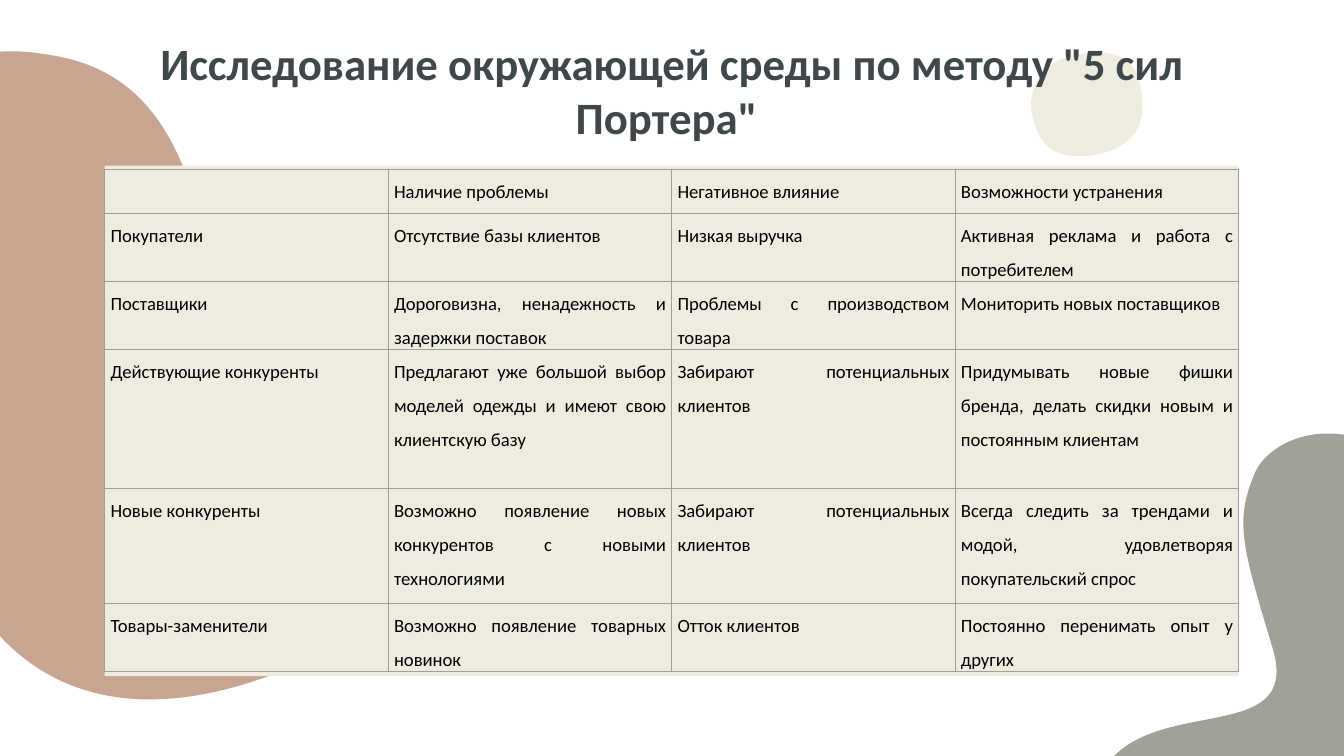
import math

from lxml import etree
from pptx import Presentation, util as u
from pptx.dml.color import RGBColor
from pptx.enum import shapes, text
from pptx.oxml.ns import qn

COLORS = {"clay": "C8A591", "stone": "A0A299", "cream": "EDECDF",
          "heading": "40474B", "body": "000000", "grid": "9E9E9E"}
FONT = "Calibri"
HEADING = 'Исследование окружающей среды по методу "5 сил Портера" '
FORCES = [
    ("", "Наличие проблемы", "Негативное влияние ", "Возможности устранения"),
    ("Покупатели", "Отсутствие базы клиентов", "Низкая выручка",
     "Активная реклама и работа с потребителем"),
    ("Поставщики", "Дороговизна, ненадежность и задержки поставок",
     "Проблемы с производством товара", "Мониторить новых поставщиков"),
    ("Действующие конкуренты",
     "Предлагают уже большой выбор моделей одежды и имеют свою клиентскую базу",
     "Забирают потенциальных клиентов",
     "Придумывать новые фишки бренда, делать скидки новым и постоянным клиентам"),
    ("Новые конкуренты", "Возможно появление новых конкурентов с новыми технологиями",
     "Забирают потенциальных клиентов",
     "Всегда следить за трендами и модой, удовлетворяя покупательский спрос"),
    ("Товары-заменители", "Возможно появление товарных новинок", "Отток клиентов",
     "Постоянно перенимать опыт у других"),
]
ROW_HEIGHTS = [0.83, 1.29, 1.29, 2.63, 2.17, 1.29]
LEFT, WIDTH = 1.98, 21.43

BLOB_UNIT = 2.54
BLOBS = [
    ("clay", 90, (1.7, 2.94), (4.15, 3.91), [
        (4.15, 3.84, 4.12, 3.75, 4.07, 3.65), (3.82, 3.13, 3.63, 3.32, 2.69, 3.38),
        (1.15, 3.48, 2.07, 0.74, 0.43, 0.43), (-0.45, 0.26, -0.74, 0.66, -0.74, 1.74),
        (-0.74, 2.07, -0.72, 2.45, -0.67, 2.9), (-0.48, 4.86, 0.52, 5.63, 2.11, 5),
        (3.45, 4.47, 4.15, 4.33, 4.15, 3.91)]),
    ("stone", 71.2, (9.36, 5.17), (9.34, 3.52), [
        (9.18, 3.89, 9.24, 4.07, 9.47, 4.84), (9.7, 5.62, 8.41, 5.11, 8.15, 5.86),
        (7.9, 6.62, 8.96, 7.28, 9.75, 7.01), (10.54, 6.74, 11.39, 5.37, 10.91, 4.15),
        (10.42, 2.94, 9.51, 3.16, 9.34, 3.52)]),
    ("cream", 0, (8.11, 0.78), (8.15, 0.39), [
        (8.13, 0.39, 8.1, 0.39, 8.07, 0.4), (7.8, 0.42, 7.67, 0.59, 7.67, 0.8),
        (7.71, 1.04, 7.8, 1.16, 8.01, 1.16), (8.04, 1.16, 8.06, 1.16, 8.09, 1.16),
        (8.36, 1.13, 8.55, 1, 8.49, 0.67), (8.46, 0.47, 8.36, 0.39, 8.15, 0.39)]),
]


def color(name):
    return RGBColor.from_string(COLORS[name])


def paint(shape, fill):
    shape.fill.solid()
    shape.fill.fore_color.rgb = color(fill)
    shape.line.fill.background()
    shape.shadow.inherit = False


def turn_back(point, center, degrees):
    angle = math.radians(-degrees)
    dx, dy = point[0] - center[0], point[1] - center[1]
    x = center[0] + dx * math.cos(angle) - dy * math.sin(angle)
    y = center[1] + dx * math.sin(angle) + dy * math.cos(angle)
    return u.Cm(x * BLOB_UNIT), u.Cm(y * BLOB_UNIT)


def add_blob(slide, fill, degrees, center, start, curves):
    controls = [curve[i:i + 2] for curve in curves for i in (0, 2, 4)]
    first, *rest = [turn_back(point, center, degrees) for point in [start, *controls]]
    builder = slide.shapes.build_freeform(*first)
    builder.add_line_segments(rest, close=True)
    blob = builder.convert_to_shape()
    lines = list(blob._element.iter(qn("a:lnTo")))
    for i in range(0, len(curves) * 3, 3):
        bend = etree.Element(qn("a:cubicBezTo"))
        lines[i].addprevious(bend)
        for line in lines[i:i + 3]:
            bend.append(line[0])
    for line in lines:
        line.getparent().remove(line)
    blob.rotation = degrees
    paint(blob, fill)


def style(paragraph, size, name, bold=False):
    for run in paragraph.runs:
        run.font.name = FONT
        run.font.size = u.Pt(size)
        run.font.bold = bold
        run.font.color.rgb = color(name)
    if not paragraph.runs:
        etree.SubElement(paragraph._p, qn("a:endParaRPr"), sz=str(size * 100))


def add_borders(cell):
    properties = cell._tc.get_or_add_tcPr()
    for position, side in enumerate(("lnL", "lnR", "lnT", "lnB")):
        border = etree.Element(qn(f"a:{side}"), w=str(u.Pt(0.75)))
        fill = etree.SubElement(border, qn("a:solidFill"))
        etree.SubElement(fill, qn("a:srgbClr"), val=COLORS["grid"])
        properties.insert(position, border)


deck = Presentation()
deck.slide_width, deck.slide_height = u.Cm(25.4), u.Cm(14.29)
slide = deck.slides.add_slide(deck.slide_layouts[6])

for blob in BLOBS:
    add_blob(slide, *blob)

heading = slide.shapes.add_textbox(u.Cm(LEFT), u.Cm(1.46), u.Cm(WIDTH), u.Cm(1.5)).text_frame
heading.word_wrap = True
heading.vertical_anchor = text.MSO_ANCHOR.BOTTOM
heading.margin_left = heading.margin_right = u.Cm(0.25)
heading.margin_top = heading.margin_bottom = u.Cm(0.25)
heading.text = HEADING
heading.paragraphs[0].alignment = text.PP_ALIGN.CENTER
style(heading.paragraphs[0], 24, "heading", bold=True)

backing = slide.shapes.add_shape(shapes.MSO_SHAPE.RECTANGLE, u.Cm(LEFT), u.Cm(3.13),
                                 u.Cm(WIDTH), u.Cm(9.65))
paint(backing, "cream")

forces = slide.shapes.add_table(len(FORCES), len(FORCES[0]), u.Cm(LEFT), u.Cm(3.2),
                                u.Cm(WIDTH), u.Cm(sum(ROW_HEIGHTS))).table
forces.first_row = forces.horz_banding = False
for row, height in zip(forces.rows, ROW_HEIGHTS):
    row.height = u.Cm(height)
for row, entries in zip(forces.rows, FORCES):
    for cell, entry in zip(row.cells, entries):
        cell.fill.background()
        cell.margin_left = cell.margin_right = u.Cm(0.11)
        cell.margin_top = cell.margin_bottom = 0
        add_borders(cell)
        cell.text_frame.text = entry
        paragraph = cell.text_frame.paragraphs[0]
        paragraph.alignment = text.PP_ALIGN.JUSTIFY
        paragraph.line_spacing = 1.5
        style(paragraph, 10, "body")

deck.save("out.pptx")
